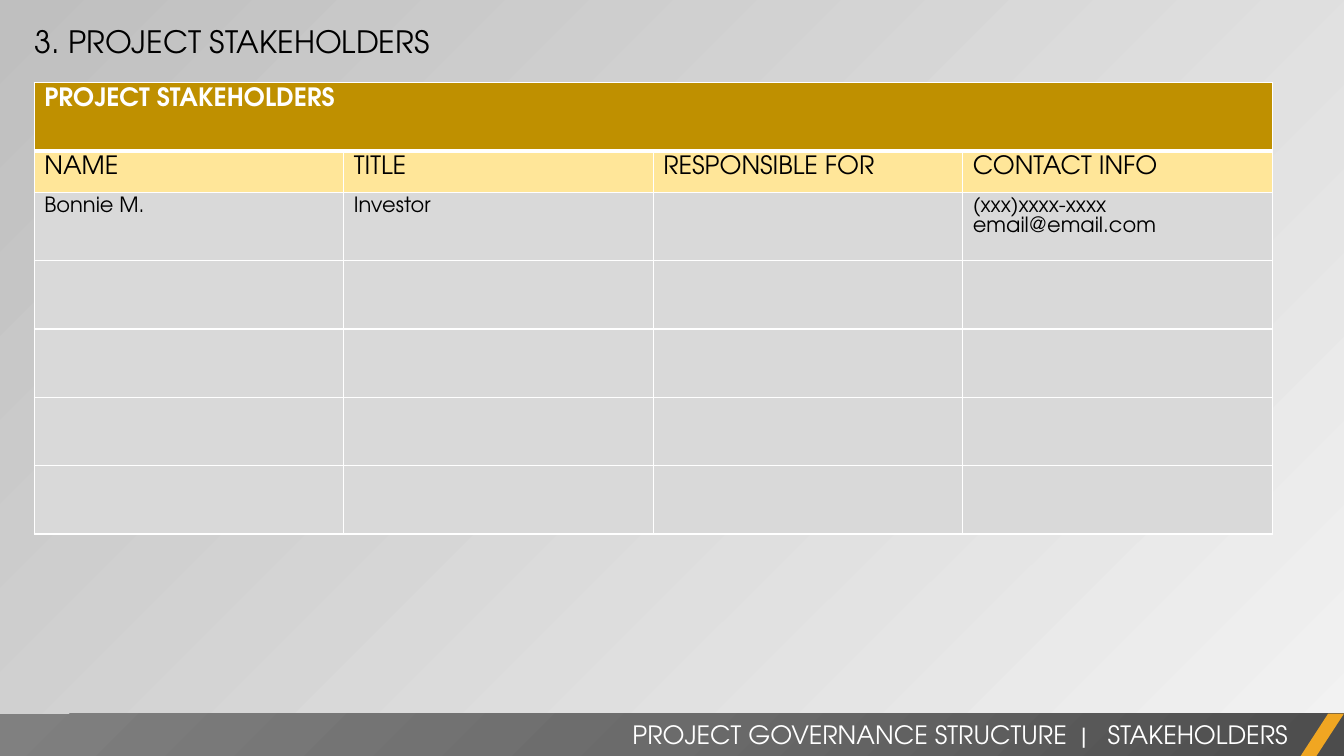
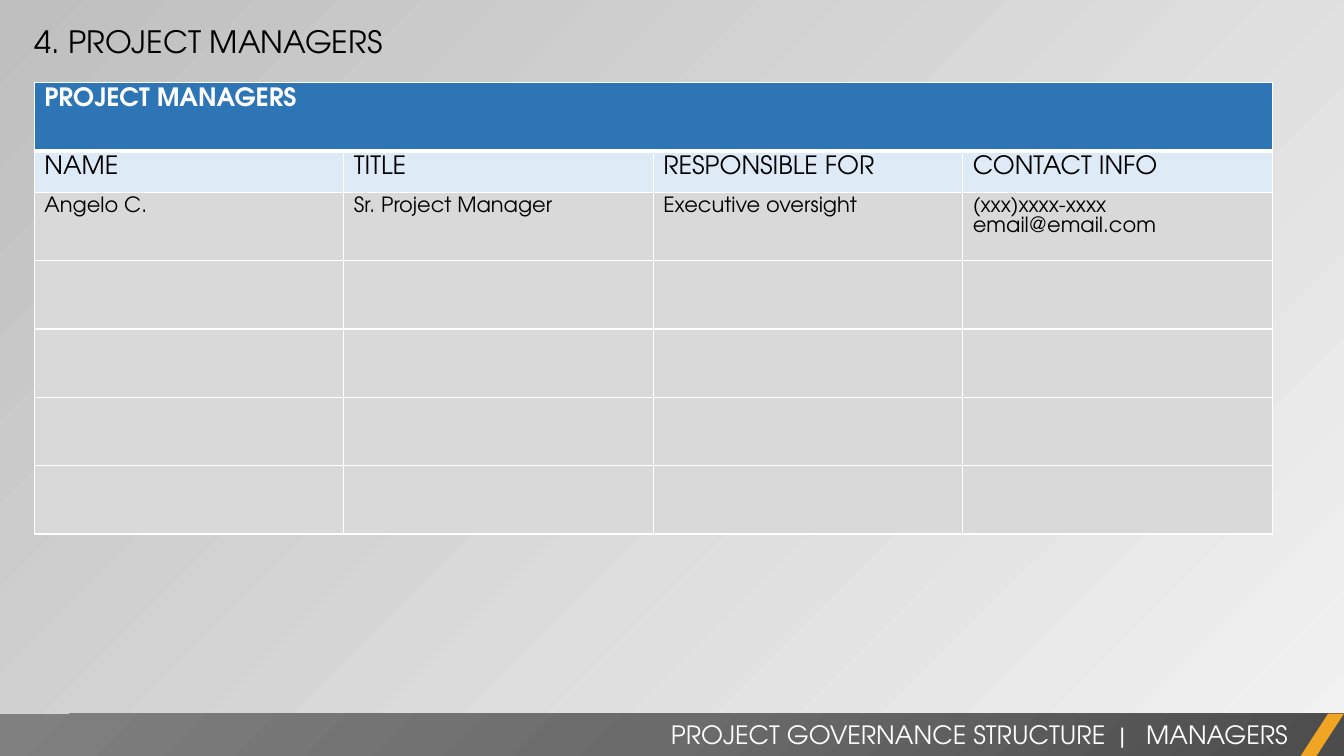
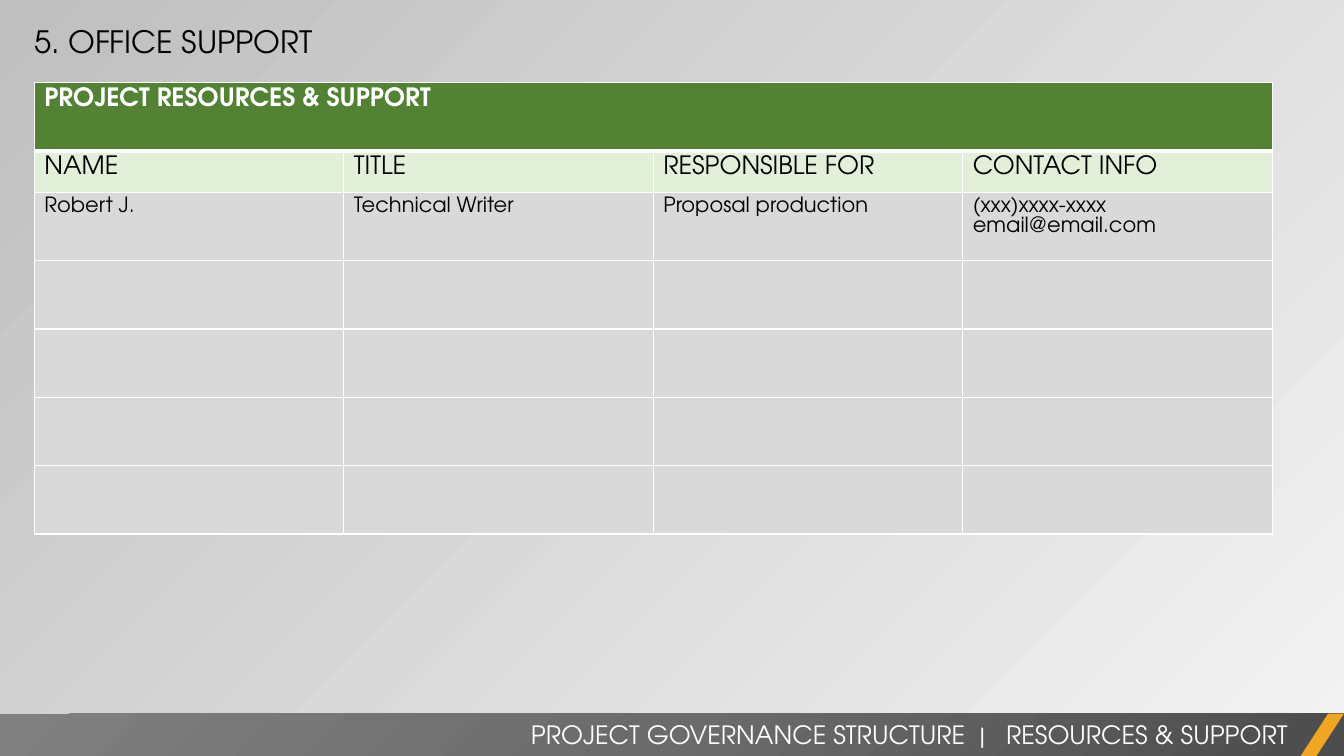
from pptx import Presentation
from pptx.dml.color import RGBColor
from pptx.enum.shapes import MSO_SHAPE
from pptx.enum.text import MSO_ANCHOR, PP_ALIGN
from pptx.oxml import parse_xml
from pptx.oxml.ns import nsdecls
from pptx.util import Inches, Pt

RECTANGLE, PARALLELOGRAM = MSO_SHAPE.RECTANGLE, MSO_SHAPE.PARALLELOGRAM
TOP = MSO_ANCHOR.TOP
LEFT, RIGHT = PP_ALIGN.LEFT, PP_ALIGN.RIGHT

FONT = "TeX Gyre Adventor"
BLACK = RGBColor(0x00, 0x00, 0x00)
WHITE = RGBColor(0xFF, 0xFF, 0xFF)
PALE_GREY = RGBColor(0xF2, 0xF2, 0xF2)
MID_GREY = RGBColor(0xBF, 0xBF, 0xBF)
CELL_GREY = RGBColor(0xD9, 0xD9, 0xD9)
ORANGE = RGBColor(0xF0, 0xA6, 0x22)
GOLD, PALE_GOLD = RGBColor(0xBF, 0x90, 0x00), RGBColor(0xFF, 0xE6, 0x99)
BLUE, PALE_BLUE = RGBColor(0x2E, 0x75, 0xB6), RGBColor(0xDE, 0xEB, 0xF7)
GREEN, PALE_GREEN = RGBColor(0x54, 0x82, 0x35), RGBColor(0xE2, 0xF0, 0xD9)
BAND_STOPS = [
    (0, RGBColor(0x4C, 0x4C, 0x4C)),
    (50, RGBColor(0x6B, 0x6B, 0x6B)),
    (100, RGBColor(0x80, 0x80, 0x80)),
]

SLIDE_WIDTH, SLIDE_HEIGHT = 13.33, 7.5
TITLE_BOX = (0.24, 0.18, 6.67, 0.47)
TABLE_BOX = (0.34, 0.82, 12.28, 4.48)
FOOTER_BOX = (0, 7.08, SLIDE_WIDTH, 0.42)
ROW_COUNT = 7
HEADING_ROW, HEADING_HEIGHT = 1, 0.41
HEADINGS = ["NAME", "TITLE", "RESPONSIBLE FOR", "CONTACT INFO"]
CONTACT = "(xxx)xxxx-xxxx\nemail@email.com"
SECTION = "PROJECT GOVERNANCE STRUCTURE"

# Slide title, footer topic, table banner, banner colour, heading colour, person
PAGES = [
    ("3. PROJECT STAKEHOLDERS", "STAKEHOLDERS", "PROJECT STAKEHOLDERS",
     GOLD, PALE_GOLD, ["Bonnie M.", "Investor", "", CONTACT]),
    ("4. PROJECT MANAGERS", "MANAGERS", "PROJECT MANAGERS",
     BLUE, PALE_BLUE,
     ["Angelo C.", "Sr. Project Manager", "Executive oversight", CONTACT]),
    ("5. OFFICE SUPPORT", "RESOURCES & SUPPORT", "PROJECT RESOURCES & SUPPORT",
     GREEN, PALE_GREEN,
     ["Robert J.", "Technical Writer", "Proposal production", CONTACT]),
]


def inches(box):
    return [Inches(length) for length in box]


def add_span(para, text, size, color, bold=False):
    span = para.add_run()
    span.text = text
    span.font.name = FONT
    span.font.size = Pt(size)
    span.font.bold = bold
    span.font.color.rgb = color
    return span


def add_plain_shape(page, kind, box):
    shape = page.shapes.add_shape(kind, *inches(box))
    shape.shadow.inherit = False
    shape.line.fill.background()
    return shape


def set_background(deck):
    """Diagonal grey gradient, shared by every slide through the master."""
    fill = deck.slide_master.background.fill
    fill.gradient()
    fill.gradient_angle = 135
    for stop, position, color in zip(fill.gradient_stops, (0, 1),
                                     (PALE_GREY, MID_GREY)):
        stop.position = position
        stop.color.rgb = color


def fill_radial(shape, stops):
    """Radial gradient centred on the bottom right corner."""
    marks = "".join(
        f'<a:gs pos="{position * 1000}"><a:srgbClr val="{color}"/></a:gs>'
        for position, color in stops)
    gradient = parse_xml(
        f'<a:gradFill {nsdecls("a")} rotWithShape="1"><a:gsLst>{marks}</a:gsLst>'
        '<a:path path="circle"><a:fillToRect l="100000" t="100000"/></a:path>'
        '</a:gradFill>')
    shape.fill.background()
    blank = shape.fill._xPr.eg_fillProperties
    blank.getparent().replace(blank, gradient)


def add_title(page, box, text):
    title = page.shapes.title
    title.left, title.top, title.width, title.height = inches(box)
    frame = title.text_frame
    frame.word_wrap = True
    frame.vertical_anchor = TOP
    para = frame.paragraphs[0]
    para.alignment = LEFT
    add_span(para, text, 22, BLACK)


def add_footer(page, box, topic):
    left, top, width, height = box
    # Dark band with a slanted accent at its right end
    band = add_plain_shape(page, RECTANGLE, box)
    fill_radial(band, BAND_STOPS)
    accent = add_plain_shape(
        page, PARALLELOGRAM, (left + width - 0.43, top, 0.43, height))
    accent.adjustments[0] = 0.65
    accent.fill.solid()
    accent.fill.fore_color.rgb = ORANGE
    # Section and topic
    label = page.shapes.add_textbox(
        *inches((left + 0.13, top + 0.01, width - 0.59, 0.4)))
    label.text_frame.word_wrap = True
    para = label.text_frame.paragraphs[0]
    para.alignment = RIGHT
    add_span(para, SECTION, 18, WHITE)
    divider = add_span(para, " | ", 18, WHITE)
    divider.font._element.set("spc", "500")  # widens the gaps by 5 pt
    add_span(para, topic, 18, WHITE)


def set_borders(cell, top, bottom):
    properties = cell._tc.get_or_add_tcPr()
    for side, points in (("L", 1), ("R", 1), ("T", top), ("B", bottom)):
        properties.append(parse_xml(
            f'<a:ln{side} {nsdecls("a")} w="{Pt(points)}"><a:solidFill>'
            f'<a:srgbClr val="{WHITE}"/></a:solidFill></a:ln{side}>'))


def fill_cell(cell, text, size, color, bold):
    frame = cell.text_frame
    for index, line in enumerate(text.split("\n") if text else []):
        para = frame.add_paragraph() if index else frame.paragraphs[0]
        add_span(para, line, size, color, bold)


def add_people_table(page, box, banner, banner_color, heading_color, person):
    columns = len(HEADINGS)
    table = page.shapes.add_table(ROW_COUNT, columns, *inches(box)).table
    table.horz_banding = False
    for column in table.columns:
        column.width = Inches(box[2] / columns)
    # The heading row is low, the others share the remaining height
    for row in table.rows:
        row.height = Inches((box[3] - HEADING_HEIGHT) / (ROW_COUNT - 1))
    table.rows[HEADING_ROW].height = Inches(HEADING_HEIGHT)
    table.cell(0, 0).merge(table.cell(0, columns - 1))

    # Banner, headings, one person, then rows left to fill in
    blank = [""] * columns
    styles = [
        ([banner] + blank[1:], banner_color, 18, WHITE, True),
        (HEADINGS, heading_color, 18, BLACK, False),
        (person, CELL_GREY, 15, BLACK, False),
    ]
    styles += [(blank, CELL_GREY, 15, BLACK, False)] * (ROW_COUNT - len(styles))
    for index, (texts, shade, size, color, bold) in enumerate(styles):
        for cell, text in zip(table.rows[index].cells, texts):
            set_borders(cell, 3 if index == HEADING_ROW else 1,
                        3 if index == 0 else 1)
            cell.fill.solid()
            cell.fill.fore_color.rgb = shade
            fill_cell(cell, text, size, color, bold)


def add_people_page(deck, title, topic, *table_parts):
    page = deck.slides.add_slide(deck.slide_layouts.get_by_name("Title Only"))
    add_footer(page, FOOTER_BOX, topic)
    add_people_table(page, TABLE_BOX, *table_parts)
    add_title(page, TITLE_BOX, title)


def main():
    deck = Presentation()
    deck.slide_width = Inches(SLIDE_WIDTH)
    deck.slide_height = Inches(SLIDE_HEIGHT)
    set_background(deck)
    for parts in PAGES:
        add_people_page(deck, *parts)
    deck.save("out.pptx")


if __name__ == "__main__":
    main()
